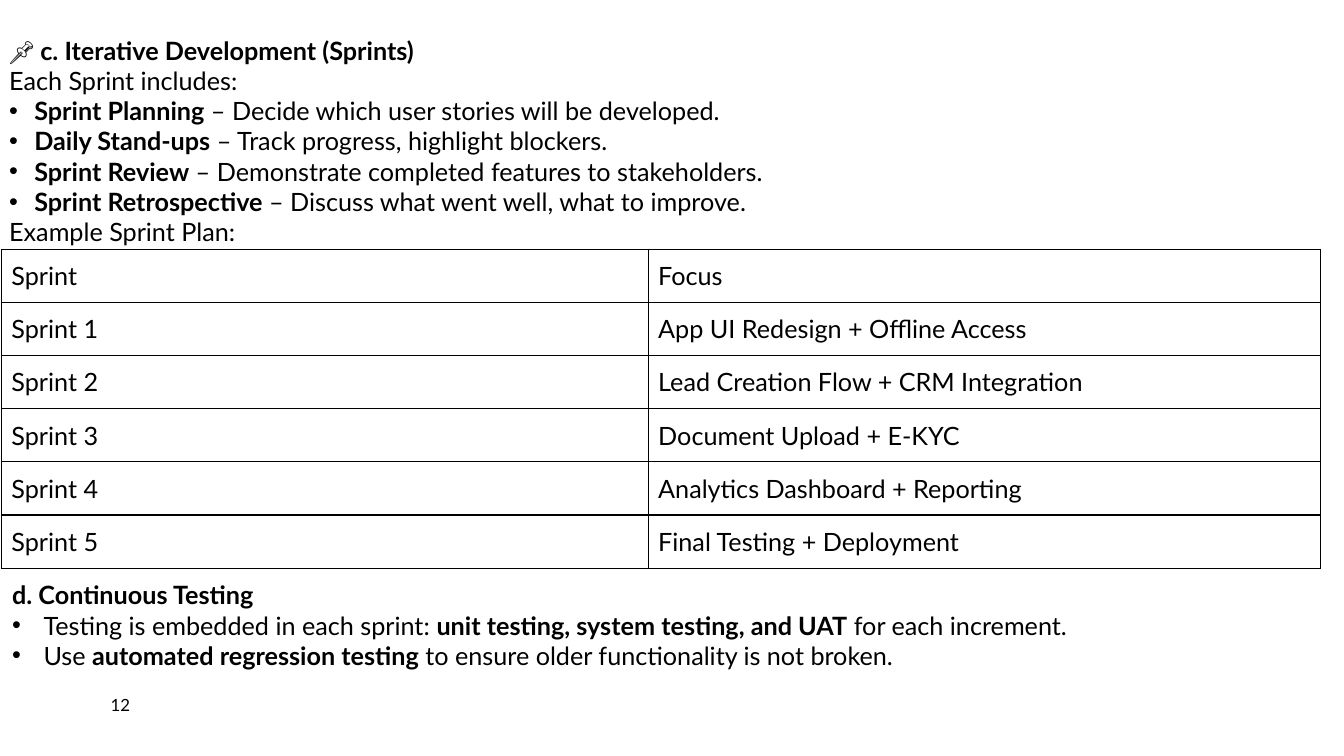
from lxml import etree
from pptx import Presentation
from pptx import util as u
from pptx.dml.color import RGBColor
from pptx.enum import text
from pptx.oxml import ns

Pt = u.Pt
BLACK = RGBColor(0, 0, 0)
MID = text.MSO_ANCHOR.MIDDLE
GROW = text.MSO_AUTO_SIZE.SHAPE_TO_FIT_TEXT

INTRO = [
    "*📌 c. Iterative Development (Sprints)*",
    "Each Sprint includes:",
    "• *Sprint Planning* – Decide which user stories will be developed.",
    "• *Daily Stand-ups* – Track progress, highlight blockers.",
    "• *Sprint Review* – Demonstrate completed features to stakeholders.",
    "• *Sprint Retrospective* – Discuss what went well, what to improve.",
    "Example Sprint Plan:",
]
FOCUS = [
    "App UI Redesign + Offline Access",
    "Lead Creation Flow + CRM Integration",
    "Document Upload + E-KYC",
    "Analytics Dashboard + Reporting",
    "Final Testing + Deployment",
]
PLAN = [("Sprint", "Focus")]
PLAN += [(f"Sprint {num}", focus) for num, focus in enumerate(FOCUS, 1)]
TESTS = [
    "*d. Continuous Testing*",
    "• Testing is embedded in each sprint: *unit testing, system testing, and UAT* for each increment.",
    "• Use *automated regression testing* to ensure older functionality is not broken.",
]


def apply(item, form):
    for key, value in form.items():
        setattr(item, key, value)


def add(base, tag, **attrs):
    return etree.SubElement(base, ns.qn(tag), attrs)


class Deck:
    font = {"name": "Lato", "size": Pt(18), "bold": False}

    def __init__(self, slide):
        self.slide = slide

    def style(self, run, **form):
        apply(run.font, {**self.font, **form})
        run.font.color.rgb = BLACK

    def bullet(self, para, dent):
        props = para._p.get_or_add_pPr()
        props.set("marL", str(Pt(dent)))
        props.set("indent", str(-Pt(dent)))
        add(props, "a:buFont", typeface="Arial")
        add(props, "a:buChar", char="•")

    def fill(self, frame, lines, dent=0, **form):
        for spot, line in enumerate(lines):
            para = frame.add_paragraph() if spot else frame.paragraphs[0]
            if line.startswith("• "):
                self.bullet(para, dent)
            for turn, part in enumerate(line.removeprefix("• ").split("*")):
                if part:
                    run = para.add_run()
                    run.text = part
                    self.style(run, bold=turn % 2 == 1, **form)

    def box(self, area, lines, frame, **form):
        shape = self.slide.shapes.add_textbox(*map(Pt, area))
        apply(shape.text_frame, {"word_wrap": True, **frame})
        self.fill(shape.text_frame, lines, **form)

    def border(self, cell):
        props = cell._tc.get_or_add_tcPr()
        for rank, side in enumerate("LRTB"):
            line = etree.Element(ns.qn(f"a:ln{side}"), w=str(Pt(1)))
            add(add(line, "a:solidFill"), "a:srgbClr", val=str(BLACK))
            props.insert(rank, line)

    def table(self, area, rows, wide):
        shape = self.slide.shapes.add_table(len(rows), len(wide), *map(Pt, area))
        grid = shape.table
        apply(grid, {"first_row": False, "horz_banding": False})
        for column, width in zip(grid.columns, wide):
            column.width = Pt(width)
        for row, words in zip(grid.rows, rows):
            row.height = Pt(area[3] / len(rows))
            for cell, word in zip(row.cells, words):
                cell.fill.background()
                cell.vertical_anchor = MID
                self.fill(cell.text_frame, [word])
                self.border(cell)


def main():
    show = Presentation()
    apply(show, {"slide_width": Pt(960), "slide_height": Pt(540)})
    deck = Deck(show.slides.add_slide(show.slide_layouts[6]))
    deck.box((72, 492, 50, 23), ["12"], {"vertical_anchor": MID}, size=Pt(12))
    deck.table((1, 178, 942, 228), PLAN, (462, 480))
    deck.box((-0.5, 21.5, 945, 181.5), INTRO, {"auto_size": GROW}, dent=18)
    deck.box((1.5, 410.5, 943, 94), TESTS, {"auto_size": GROW}, dent=22.5)
    show.save("out.pptx")


if __name__ == "__main__":
    main()
